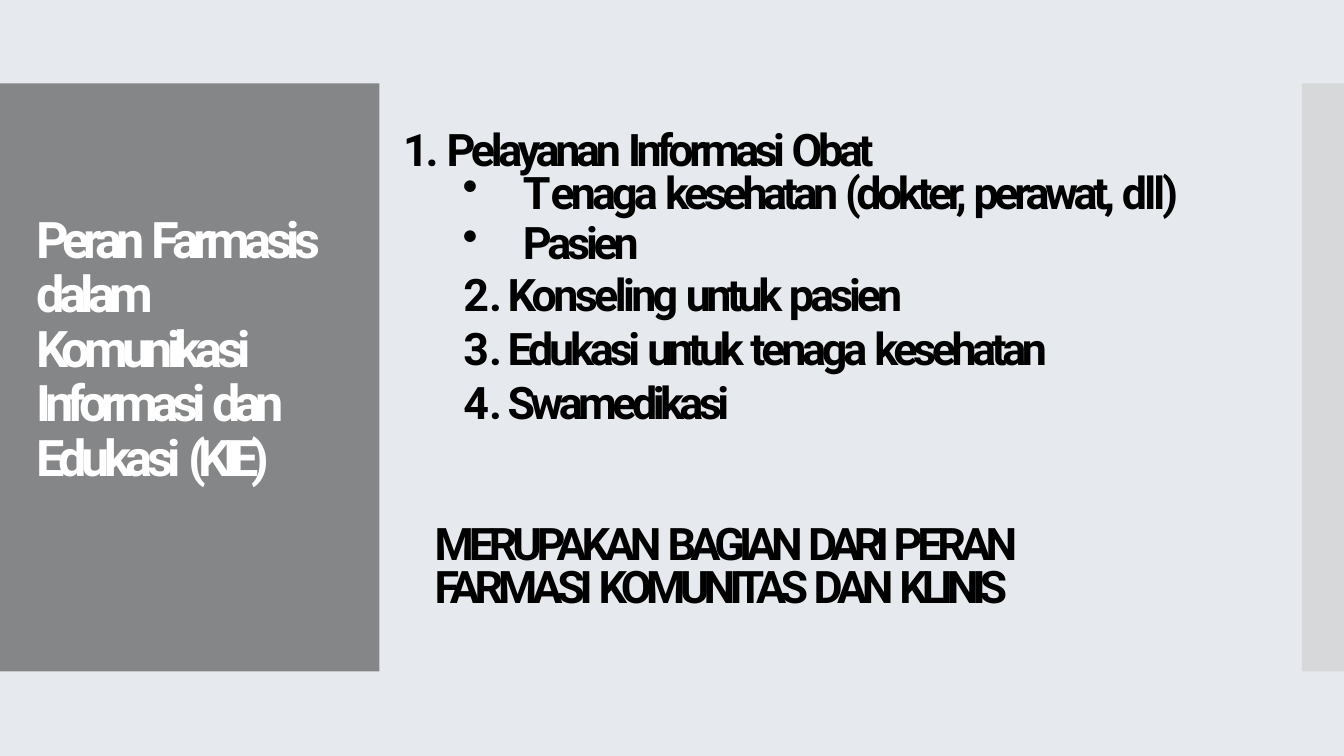
from dataclasses import dataclass
from typing import Optional

from lxml.etree import SubElement
from pptx import Presentation
from pptx.dml.color import RGBColor
from pptx.enum.shapes import MSO_SHAPE
from pptx.enum.text import MSO_ANCHOR, PP_ALIGN
from pptx.oxml.ns import qn
from pptx.util import Pt

EMU_PER_PX = 9525
FONT = "Roboto"
COLORS = {
    "background": "E6EAEE",
    "panel": "858688",
    "strip": "C6C6C6",
    "title": "FFFFFF",
    "body": "000000",
}


@dataclass
class Box:
    left: int
    top: int
    width: int
    height: int


@dataclass
class Line:
    runs: list[tuple[str, float]]
    margin: int = 1
    indent: int = 0
    before: float = 1
    spacing: float = 1.0
    bullet: Optional[str] = None
    start: Optional[int] = None


@dataclass
class TextBlock:
    box: Box
    lines: list[Line]
    inset_top: int = 1


def bullet_line(*runs: tuple[str, float]) -> Line:
    return Line(list(runs), margin=87, indent=-86, bullet="•")


def numbered_line(before: float, *runs: tuple[str, float]) -> Line:
    return Line(list(runs), margin=65, indent=-63, before=before, start=2)


PANEL = Box(0, 119, 542, 840)
STRIP = Box(1860, 119, 60, 840)

TITLE = Line(
    [("Peran ", -6.4), ("Farmasis dalam ", -6), ("Komunikasi ", -6.2),
     ("Informasi ", -6.5), ("dan ", -6.3), ("Edukasi ", -5.9), ("(KIE)", -7.8)],
    margin=52, before=0, spacing=0.9,
)

BLOCKS = [
    TextBlock(Box(575, 173, 766, 80), [
        Line([("1. ", -3.5), ("Pelayanan ", -4.6), ("Informasi ", -4.9), ("Obat", -4.8)]),
    ]),
    TextBlock(Box(660, 234, 1171, 80), [
        bullet_line(("T", -11.1), ("enaga ", -4.2), ("kesehatan ", -4.7),
                    ("(dokter, ", -4.8), ("perawat, ", -4.7), ("dll)", -3)),
    ]),
    TextBlock(Box(660, 306, 267, 80), [bullet_line(("Pasien", -4.5))]),
    TextBlock(Box(660, 380, 944, 234), [
        numbered_line(1, ("Konseling ", -3.9), ("untuk ", -4.8), ("pasien", -4.3)),
        numbered_line(0.5, ("Edukasi ", -4.5), ("untuk ", -4.8),
                      ("tenaga ", -4.5), ("kesehatan", -4.8)),
        numbered_line(0.4, ("Swamedikasi", -4.9)),
    ]),
    TextBlock(Box(620, 736, 937, 141), [
        Line([("MERUPAKAN ", -5.5), ("BAGIAN ", -6.2), ("DARI ", -7),
              ("PERAN FARMASI ", -5.6), ("KOMUNITAS ", -6), ("DAN ", -5.7),
              ("KLINIS", -6.5)], before=12.6, spacing=0.8),
    ], inset_top=16),
]


def px(value: int) -> int:
    return value * EMU_PER_PX


def rgb(name: str) -> RGBColor:
    return RGBColor.from_string(COLORS[name])


def place(box: Box) -> tuple[int, ...]:
    return tuple(px(value) for value in (box.left, box.top, box.width, box.height))


def add_rectangle(slide, box: Box, color: str, opacity: int = 100):
    shape = slide.shapes.add_shape(MSO_SHAPE.RECTANGLE, *place(box))
    shape.shadow.inherit = False
    shape.line.fill.background()
    shape.fill.solid()
    shape.fill.fore_color.rgb = rgb(color)
    if opacity < 100:
        fill_color = shape.fill._xPr.find(qn("a:solidFill"))[0]
        SubElement(fill_color, qn("a:alpha"), val=str(opacity * 1000))
    return shape


def write_line(paragraph, line: Line, size: int, color: str) -> None:
    paragraph.alignment = PP_ALIGN.LEFT
    paragraph.space_before = Pt(line.before)
    paragraph.line_spacing = line.spacing
    properties = paragraph._p.get_or_add_pPr()
    properties.set("marL", str(px(line.margin)))
    properties.set("indent", str(px(line.indent)))
    if line.bullet:
        SubElement(properties, qn("a:buChar"), char=line.bullet)
    elif line.start:
        SubElement(properties, qn("a:buAutoNum"), type="arabicPeriod", startAt=str(line.start))
    for text, tracking in line.runs:
        run = paragraph.add_run()
        run.text = text
        run.font.name = FONT
        run.font.size = Pt(size)
        run.font.bold = True
        run.font.color.rgb = rgb(color)
        run._r.get_or_add_rPr().set("spc", str(round(tracking * 100)))


def write_text(shape, lines: list[Line], size: int, color: str,
               inset_top: int, inset_right: int = 0) -> None:
    frame = shape.text_frame
    frame.word_wrap = True
    frame.vertical_anchor = MSO_ANCHOR.TOP
    frame.margin_left = frame.margin_bottom = 0
    frame.margin_top = px(inset_top)
    frame.margin_right = px(inset_right)
    for index, line in enumerate(lines):
        paragraph = frame.add_paragraph() if index else frame.paragraphs[0]
        write_line(paragraph, line, size, color)


def main() -> None:
    presentation = Presentation()
    presentation.slide_width = px(1920)
    presentation.slide_height = px(1080)
    slide = presentation.slides.add_slide(presentation.slide_layouts[6])
    slide.background.fill.solid()
    slide.background.fill.fore_color.rgb = rgb("background")

    add_rectangle(slide, STRIP, "strip", opacity=49)
    panel = add_rectangle(slide, PANEL, "panel")
    write_text(panel, [TITLE], 54, "title", inset_top=188, inset_right=58)
    for block in BLOCKS:
        text_box = slide.shapes.add_textbox(*place(block.box))
        write_text(text_box, block.lines, 48, "body", block.inset_top)

    presentation.save("out.pptx")


if __name__ == "__main__":
    main()
